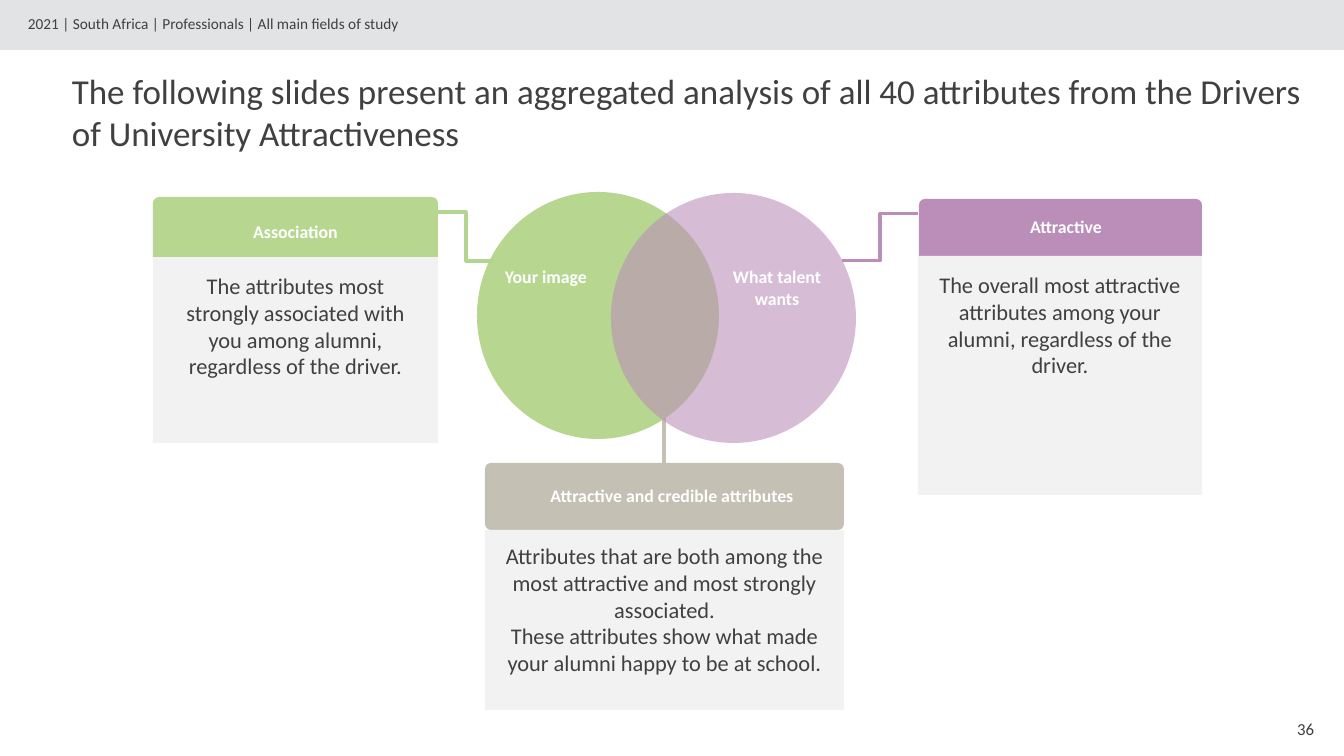
from lxml.etree import SubElement
from pptx import Presentation
from pptx.dml.color import RGBColor
from pptx.enum.shapes import MSO_CONNECTOR, MSO_SHAPE
from pptx.enum.text import MSO_ANCHOR, PP_ALIGN
from pptx.oxml.ns import qn
from pptx.util import Emu, Pt

SLIDE_WIDTH, SLIDE_HEIGHT = 1344, 756
EMU_PER_PX = 914400 / 100.8

TEXT_GREY = RGBColor(0x41, 0x40, 0x41)
WHITE = RGBColor(0xFF, 0xFF, 0xFF)
BAND_GREY = RGBColor(0xE2, 0xE3, 0xE4)
PANEL_GREY = RGBColor(0xF2, 0xF2, 0xF2)
GREEN = RGBColor(0xB7, 0xD7, 0x91)
LINE_GREEN = RGBColor(0xB4, 0xD5, 0x8F)
PURPLE = RGBColor(0xBB, 0x8D, 0xB9)
TAUPE = RGBColor(0xC5, 0xC0, 0xB4)

TITLE = {"size": Pt(25)}
CONTEXT = {"size": Pt(10.9)}
PAGE_NUMBER = {"size": Pt(12)}
LABEL = {"size": Pt(12.7), "bold": True}
BODY = {"size": Pt(16)}

TAB_RADIUS = 6


def px(value):
    return Emu(round(value * EMU_PER_PX))


def add_block(slide, kind, box, color, alpha=None):
    shape = slide.shapes.add_shape(kind, *map(px, box))
    shape.shadow.inherit = False
    shape.fill.solid()
    shape.fill.fore_color.rgb = color
    shape.line.fill.background()
    if alpha is not None:
        color_element = shape.fill._xPr.find(qn("a:solidFill"))[0]
        SubElement(color_element, qn("a:alpha"), val=str(alpha * 1000))
    return shape


def add_tab(slide, box, color):
    tab = add_block(slide, MSO_SHAPE.ROUNDED_RECTANGLE, box, color)
    tab.adjustments[0] = round(TAB_RADIUS / box[3], 2)


def add_link(slide, kind, start, end, color):
    connector = slide.shapes.add_connector(kind, *map(px, start + end))
    connector.line.color.rgb = color
    connector.line.width = Pt(2.25)
    SubElement(connector._element.spPr, qn("a:effectLst"))


def add_text(slide, box, lines, text_format, color=TEXT_GREY,
             alignment=PP_ALIGN.CENTER, anchor=MSO_ANCHOR.TOP):
    frame = slide.shapes.add_textbox(*map(px, box)).text_frame
    frame.word_wrap = True
    frame.vertical_anchor = anchor
    frame.text = "\n".join(lines)
    for paragraph in frame.paragraphs:
        paragraph.alignment = alignment
        paragraph.font.name = "Calibri"
        paragraph.font.color.rgb = color
        for name, value in text_format.items():
            setattr(paragraph.font, name, value)


def main():
    presentation = Presentation()
    presentation.slide_width = px(SLIDE_WIDTH)
    presentation.slide_height = px(SLIDE_HEIGHT)
    slide = presentation.slides.add_slide(presentation.slide_layouts[6])

    # Page frame
    add_block(slide, MSO_SHAPE.RECTANGLE, (0, 0, SLIDE_WIDTH, 50), BAND_GREY)
    add_text(slide, (18, 9, 1145, 31),
             ["2021 | South Africa | Professionals | All main fields of study"],
             CONTEXT, alignment=PP_ALIGN.LEFT)
    add_text(slide, (62, 65, 1265, 62),
             ["The following slides present an aggregated analysis of all 40 "
              "attributes from the Drivers of University Attractiveness"],
             TITLE, alignment=PP_ALIGN.LEFT)
    add_text(slide, (1226, 709, 98, 40), ["36"], PAGE_NUMBER,
             alignment=PP_ALIGN.RIGHT, anchor=MSO_ANCHOR.MIDDLE)

    # Overlapping circles with the link down from their overlap
    add_link(slide, MSO_CONNECTOR.STRAIGHT, (664, 417), (664, 501), TAUPE)
    add_block(slide, MSO_SHAPE.FLOWCHART_CONNECTOR, (477, 192, 242, 247), GREEN)
    add_block(slide, MSO_SHAPE.FLOWCHART_CONNECTOR, (611, 193, 245, 250),
              PURPLE, alpha=58)
    add_text(slide, (481, 261, 130, 31), ["Your image"], LABEL, WHITE)
    add_text(slide, (719, 261, 116, 53), ["What talent wants"], LABEL, WHITE)

    # Links to the side cards
    add_link(slide, MSO_CONNECTOR.ELBOW, (438, 212), (494, 261), LINE_GREEN)
    add_link(slide, MSO_CONNECTOR.ELBOW, (842, 261), (918, 214), PURPLE)

    # Cards: tab, colour, label box, label, panel, body box, body lines
    cards = [
        ((153, 197, 285, 68), GREEN, (153, 216, 285, 31), "Association",
         (153, 257, 285, 186), (159, 267, 273, 119),
         ["The attributes most strongly associated with you among alumni, "
          "regardless of the driver."]),
        ((919, 199, 283, 67), PURPLE, (950, 211, 232, 31), "Attractive",
         (918, 256, 284, 239), (923, 266, 274, 119),
         ["The overall most attractive attributes among your alumni, "
          "regardless of the driver."]),
        ((485, 463, 359, 67), TAUPE, (523, 480, 298, 31),
         "Attractive and credible attributes",
         (485, 530, 359, 180), (494, 537, 341, 146),
         ["Attributes that are both among the most attractive and most "
          "strongly associated.",
          "These attributes show what made your alumni happy to be at "
          "school."]),
    ]
    for tab, color, label_box, label, panel, body_box, body in cards:
        add_tab(slide, tab, color)
        add_block(slide, MSO_SHAPE.RECTANGLE, panel, PANEL_GREY)
        add_text(slide, label_box, [label], LABEL, WHITE)
        add_text(slide, body_box, body, BODY)

    presentation.save("out.pptx")


if __name__ == "__main__":
    main()
